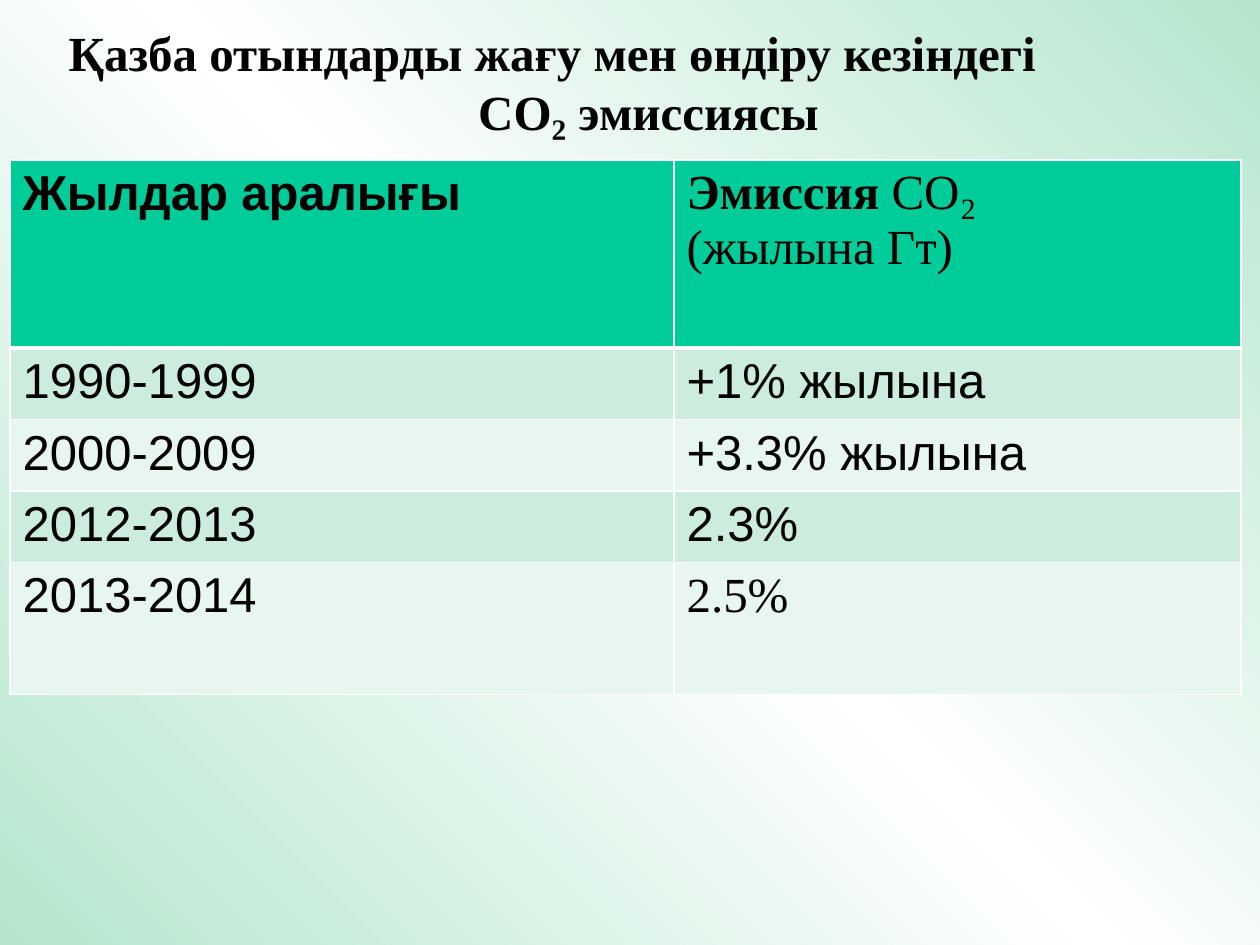
from copy import deepcopy
from typing import NamedTuple

from lxml import etree
from pptx import Presentation
from pptx.dml.color import RGBColor
from pptx.enum.text import MSO_ANCHOR, MSO_AUTO_SIZE, PP_ALIGN
from pptx.oxml.ns import qn
from pptx.util import Emu, Pt

PX = 914400 // 126
SLIDE_WIDTH, SLIDE_HEIGHT = 1260, 945
TITLE_ONLY_LAYOUT = 5

LEFT, CENTER = PP_ALIGN.LEFT, PP_ALIGN.CENTER
TOP = MSO_ANCHOR.TOP
GROW = MSO_AUTO_SIZE.SHAPE_TO_FIT_TEXT

BLACK = RGBColor(0x00, 0x00, 0x00)
WHITE = RGBColor(0xFF, 0xFF, 0xFF)
MINT = RGBColor(0xB4, 0xE6, 0xCD)
HEADER_GREEN = RGBColor(0x00, 0xCC, 0x99)
BANDS = (RGBColor(0xCC, 0xEC, 0xDE), RGBColor(0xE7, 0xF6, 0xEF))

SANS, SERIF = "Arial", "Times New Roman"


class Span(NamedTuple):
    text: str
    font: str = SANS
    bold: bool = False


Line = tuple[Span, ...]


class EmissionRow(NamedTuple):
    height: int
    period: tuple[Line, ...]
    emission: tuple[Line, ...]


TITLE_LINES = (
    (Span("Қазба отындарды жағу мен өндіру кезіндегі", SERIF, True),),
    (Span("СО₂ эмиссиясы", SERIF, True),),
)
COLUMN_WIDTHS = (664, 567)
ROWS = (
    EmissionRow(
        188,
        ((Span("Жылдар аралығы", bold=True),),),
        (
            (Span("Эмиссия ", SERIF, True), Span("СО₂", SERIF)),
            (Span("(жылына Гт)", SERIF),),
        ),
    ),
    EmissionRow(71, ((Span("1990-1999"),),), ((Span("+1% жылына"),),)),
    EmissionRow(71, ((Span("2000-2009"),),), ((Span("+3.3% жылына"),),)),
    EmissionRow(71, ((Span("2012-2013"),),), ((Span("2.3%"),),)),
    EmissionRow(132, ((Span("2013-2014"),),), ((Span("2.5%", SERIF),),)),
)


def px(length: int) -> Emu:
    return Emu(length * PX)


def write_lines(frame, lines: tuple[Line, ...], *, size: int = 28,
                color: RGBColor = BLACK, align=LEFT) -> None:
    for index, line in enumerate(lines):
        paragraph = frame.paragraphs[0] if index == 0 else frame.add_paragraph()
        paragraph.alignment = align
        for span in line:
            run = paragraph.add_run()
            run.text = span.text
            run.font.name = span.font
            run.font.size = Pt(size)
            run.font.bold = span.bold
            run.font.color.rgb = color


def paint_background(slide) -> None:
    fill = slide.background.fill
    fill.gradient()
    fill.gradient_angle = 45
    stop_list = slide.element.find(".//" + qn("a:gsLst"))
    stop_list.append(deepcopy(stop_list[0]))
    for stop, position, color in zip(fill.gradient_stops, (0, 0.5, 1), (MINT, WHITE, MINT)):
        stop.position = position
        stop.color.rgb = color


def add_title(slide) -> None:
    title = slide.shapes.title
    title.left, title.top, title.width, title.height = map(px, (35, 16, 1206, 131))
    frame = title.text_frame
    frame.word_wrap = True
    frame.auto_size = GROW
    frame.vertical_anchor = TOP
    write_lines(frame, TITLE_LINES, align=CENTER)
    first_line = frame.paragraphs[0]
    first_line.alignment = LEFT
    first_line._p.get_or_add_pPr().set("marL", str(px(21)))


def set_borders(cell, **widths: int) -> None:
    """Draw white borders, keyed by side (L, R, T, B) in points."""
    properties = cell._tc.get_or_add_tcPr()
    for index, (side, width) in enumerate(widths.items()):
        border = etree.Element(qn(f"a:ln{side}"), w=str(Pt(width)))
        solid = etree.SubElement(border, qn("a:solidFill"))
        etree.SubElement(solid, qn("a:srgbClr"), val=str(WHITE))
        properties.insert(index, border)


def add_emission_table(slide) -> None:
    heights = [row.height for row in ROWS]
    table = slide.shapes.add_table(
        len(ROWS), len(COLUMN_WIDTHS), px(10), px(160),
        px(sum(COLUMN_WIDTHS)), px(sum(heights))).table
    for column, width in zip(table.columns, COLUMN_WIDTHS):
        column.width = px(width)
    for index, row in enumerate(ROWS):
        table.rows[index].height = px(row.height)
        color = HEADER_GREEN if index == 0 else BANDS[(index - 1) % 2]
        for column, lines in enumerate((row.period, row.emission)):
            cell = table.cell(index, column)
            cell.fill.solid()
            cell.fill.fore_color.rgb = color
            set_borders(cell, L=1, R=1, T=3 if index == 1 else 1,
                        B=3 if index == 0 else 1)
            write_lines(cell.text_frame, lines)


def main() -> None:
    deck = Presentation()
    deck.slide_width, deck.slide_height = px(SLIDE_WIDTH), px(SLIDE_HEIGHT)
    slide = deck.slides.add_slide(deck.slide_layouts[TITLE_ONLY_LAYOUT])
    paint_background(slide)
    add_title(slide)
    add_emission_table(slide)
    deck.save("out.pptx")


if __name__ == "__main__":
    main()
